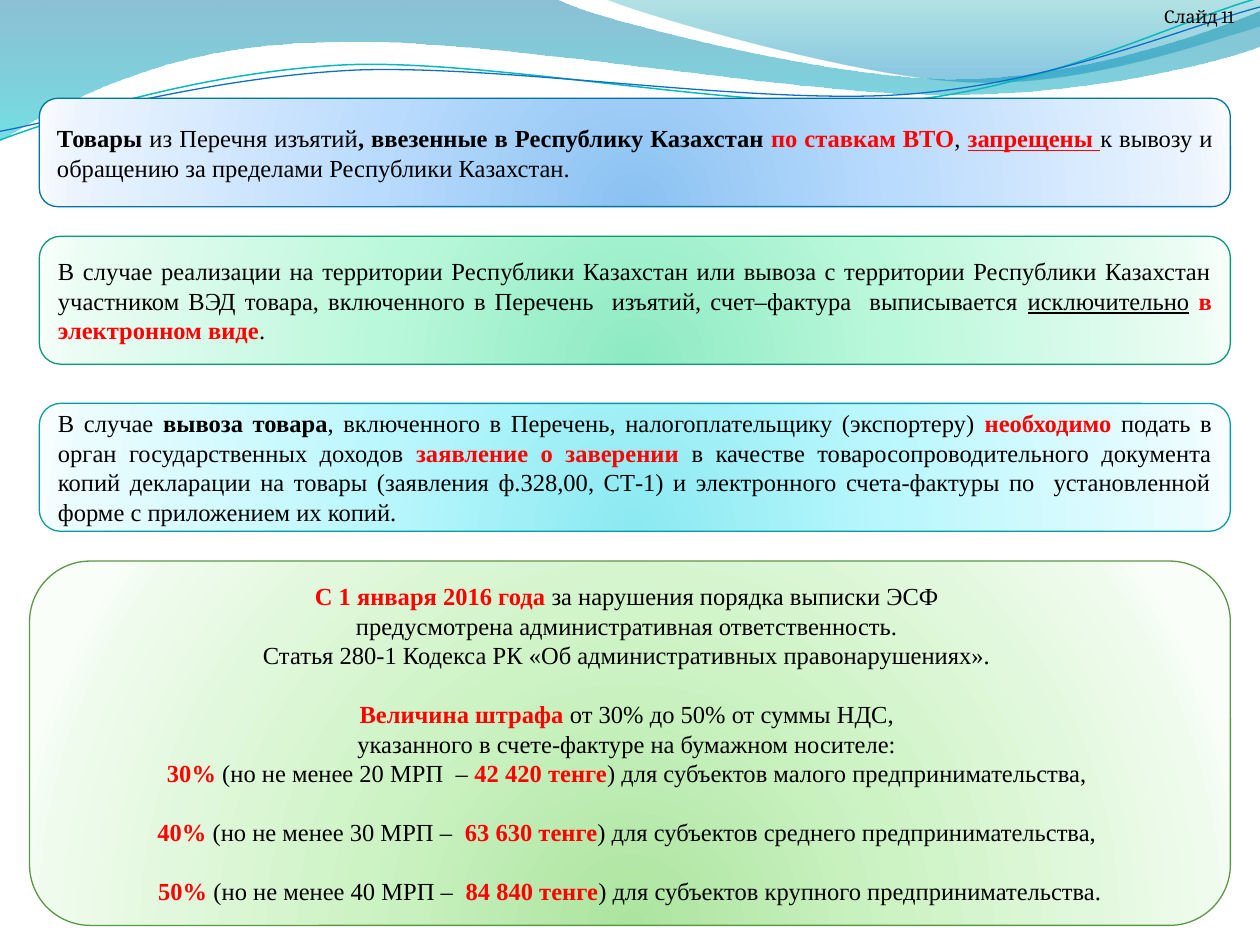
from lxml.etree import SubElement
from pptx import Presentation
from pptx.dml.color import RGBColor
from pptx.enum.shapes import MSO_SHAPE as Shape
from pptx.enum.text import MSO_ANCHOR as Anchor, PP_ALIGN as Align
from pptx.oxml.ns import qn
from pptx.util import Pt

COLORS = {
    "text": "000000", "accent": "FF0000",
    "teal_line": "0AB8BF", "blue_line": "0F6FC6",
    "wave_blue": "0074A1", "wave_cyan": "00C6CF",
    "crest_teal": "00A1A9", "crest_blue": "008BBF",
}
# Border colour, then gradient colours from the centre outwards
PALETTES = {
    "blue": ("0074A1", ["8BC2F1", "B9DBFD", "EAF3FE", "F8FBFF"]),
    "green": ("0A9B74", ["8DEAC2", "BAF8DB", "EAFCF3", "F7FFFB"]),
    "cyan": ("069CA3", ["8BE9F1", "B9F7FD", "EAFCFE", "F8FEFF"]),
    "lime": ("5B9747", ["ACE49F", "CDF3C4", "EFFBED", "F9FFF8"]),
}
GLOW_POSITIONS = [0, 43, 93, 100]
LINE_HEIGHT = Pt(16.85)
BOX_LEFT, BOX_WIDTH = 22.5, 680.6

# Run styles: b bold, r red, u underlined
BAN = [
    ("Товары ", "b"), ("из Перечня изъятий", ""),
    (", ввезенные в Республику Казахстан ", "b"), ("по ставкам ВТО", "br"),
    (", ", ""), ("запрещены ", "bru"),
    ("к вывозу и обращению за пределами Республики Казахстан.", ""),
]
INVOICE = [
    ("В случае реализации на территории Республики Казахстан или вывоза с "
     "территории Республики Казахстан участником ВЭД товара, включенного в "
     "Перечень  изъятий, счет–фактура  выписывается ", ""),
    ("исключительно", "u"), (" ", ""), ("в электронном виде", "br"), (".", ""),
]
EXPORT = [
    ("В случае ", ""), ("вывоза товара", "b"),
    (", включенного в Перечень, налогоплательщику (экспортеру) ", ""),
    ("необходимо", "br"), (" подать в орган государственных доходов ", ""),
    ("заявление о заверении ", "br"),
    ("в качестве товаросопроводительного документа копий декларации на товары "
     "(заявления ф.328,00, СТ-1) и электронного счета-фактуры по  "
     "установленной форме с приложением их копий.", ""),
]
PENALTIES = [
    [("С 1 января 2016 года ", "br"), ("за нарушения порядка выписки ЭСФ ", "")],
    [("предусмотрена административная ответственность. ", "")],
    [("Статья 280-1 Кодекса РК «Об административных правонарушениях». ", "")],
    [("Величина штрафа ", "br"), ("от 30% до 50% от суммы НДС, ", "")],
    [("указанного в счете-фактуре на бумажном носителе: ", "")],
    [("30%", "br"), (" (но не менее 20 МРП  – ", ""), ("42 420 тенге", "br"),
     (") для субъектов малого предпринимательства, ", "")],
    [("40%", "br"), (" (но не менее 30 МРП –  ", ""), ("63 630 тенге", "br"),
     (") для субъектов среднего предпринимательства, ", "")],
    [("50% ", "br"), ("(но не менее 40 МРП –  ", ""), ("84 840 тенге", "br"),
     (") для субъектов крупного предпринимательства.", "")],
]
SPACED_PENALTIES = (3, 6, 7)

# Outlines in points: pairs are straight steps, sixes are Bezier steps
WAVE = [(0, -1), (317, -1), (343, 12, 478, 45, 546, 45),
        (614, 45, 690, 19, 720, 6), (721, 26), (708, 32, 626, 55, 537, 54),
        (448, 54, 275, 20, 185, 24), (93, 25, 33, 60, -1, 81)]
CREST = [(345, -1), (366, 8, 491, 45, 554, 47), (619, 50, 692, 23, 720, 15), (720, 0)]
TEAL_CURVE = [(0, 80), (35, 67, 114, 41, 199, 37), (284, 34, 427, 64, 513, 58),
              (600, 50, 675, 11, 719, -1)]
BLUE_CURVE = [(0, 75), (34, 69, 118, 44, 204, 40), (290, 37, 430, 60, 516, 54),
              (602, 48, 678, 15, 720, 4)]


def rgb(value):
    return RGBColor.from_string(value)


def set_gradient(shape, stops, radial=False):
    """Fill with (position %, colour, opacity %) stops, top-down or radial."""
    shape.fill.gradient()
    gradient = shape.fill._xPr.find(qn("a:gradFill"))
    for child in list(gradient):
        gradient.remove(child)
    stop_list = SubElement(gradient, qn("a:gsLst"))
    for position, color, opacity in stops:
        stop = SubElement(stop_list, qn("a:gs"), pos=str(position * 1000))
        fill_color = SubElement(stop, qn("a:srgbClr"), val=color)
        if opacity < 100:
            SubElement(fill_color, qn("a:alpha"), val=str(opacity * 1000))
    if radial:
        glow = SubElement(gradient, qn("a:path"))
        glow.set("path", "circle")
        SubElement(glow, qn("a:fillToRect"), l="50000", t="130000", r="50000", b="-30000")
    else:
        SubElement(gradient, qn("a:lin"), ang="5400000", scaled="1")


def bend(outline_shape, outline):
    """Join the three straight steps of each Bezier step into one curve."""
    geometry = next(outline_shape._element.iter(qn("a:path")))
    straight = iter(geometry.findall(qn("a:lnTo")))
    for step in outline[1:]:
        first = next(straight)
        if len(step) == 2:
            continue
        curve = SubElement(geometry, qn("a:cubicBezTo"))
        first.addprevious(curve)
        for line in (first, next(straight), next(straight)):
            curve.append(line[0])
            geometry.remove(line)


def add_outline(slide, outline, close):
    points = [(Pt(x), Pt(y)) for step in outline
              for x, y in zip(step[::2], step[1::2])]
    builder = slide.shapes.build_freeform(*points[0])
    builder.add_line_segments(points[1:], close=close)
    outline_shape = builder.convert_to_shape()
    bend(outline_shape, outline)
    outline_shape.shadow.inherit = False
    return outline_shape


def add_wave(slide, outline, stops):
    wave = add_outline(slide, outline, close=True)
    set_gradient(wave, stops)
    wave.line.fill.background()


def add_curve(slide, outline, color, width):
    curve = add_outline(slide, outline, close=False)
    curve.fill.background()
    curve.line.color.rgb = rgb(color)
    curve.line.width = Pt(width)


def write_runs(paragraph, runs, align):
    paragraph.alignment = align
    paragraph.line_spacing = LINE_HEIGHT
    for text, style in runs:
        run = paragraph.add_run()
        run.text = text
        font = run.font
        font.name, font.size = "Times New Roman", Pt(14)
        font.bold, font.underline = "b" in style, "u" in style
        font.color.rgb = rgb(COLORS["accent" if "r" in style else "text"])


def add_box(slide, left, top, width, height, palette, paragraphs,
            align=Align.JUSTIFY, spaced=()):
    """Add a rounded box; paragraphs listed in spaced get a line of space above."""
    border, glow = PALETTES[palette]
    box = slide.shapes.add_shape(
        Shape.ROUNDED_RECTANGLE, Pt(left), Pt(top), Pt(width), Pt(height))
    box.shadow.inherit = False
    set_gradient(box, [(p, c, 100) for p, c in zip(GLOW_POSITIONS, glow)], radial=True)
    box.line.color.rgb = rgb(border)
    box.line.width = Pt(0.75)
    frame = box.text_frame
    frame.word_wrap = True
    frame.vertical_anchor = Anchor.MIDDLE
    for index, runs in enumerate(paragraphs):
        paragraph = frame.add_paragraph() if index else frame.paragraphs[0]
        write_runs(paragraph, runs, align)
        if index in spaced:
            paragraph.space_before = LINE_HEIGHT


def add_slide_label(slide):
    label = slide.shapes.add_textbox(Pt(658), Pt(0), Pt(62), Pt(19.4))
    label.text_frame.text = "Слайд 11"
    font = label.text_frame.paragraphs[0].runs[0].font
    font.name, font.size = "Cambria", Pt(10)
    font.color.rgb = rgb(COLORS["text"])


def main():
    deck = Presentation()
    deck.slide_width, deck.slide_height = Pt(720), Pt(540)
    slide = deck.slides.add_slide(deck.slide_layouts[6])

    add_wave(slide, WAVE, [(0, COLORS["wave_blue"], 45), (100, COLORS["wave_cyan"], 55)])
    add_wave(slide, CREST, [(0, COLORS["crest_teal"], 30), (80, COLORS["crest_blue"], 45)])
    add_curve(slide, TEAL_CURVE, COLORS["teal_line"], 0.85)
    add_curve(slide, BLUE_CURVE, COLORS["blue_line"], 0.75)

    add_box(slide, 16.9, 320.6, 686.2, 208.2, "lime", PENALTIES,
            Align.CENTER, SPACED_PENALTIES)
    for top, height, palette, runs in [(56.2, 61.9, "blue", BAN),
                                       (135, 73.1, "green", INVOICE),
                                       (230.5, 73.1, "cyan", EXPORT)]:
        add_box(slide, BOX_LEFT, top, BOX_WIDTH, height, palette, [runs])
    add_slide_label(slide)
    deck.save("out.pptx")


if __name__ == "__main__":
    main()
